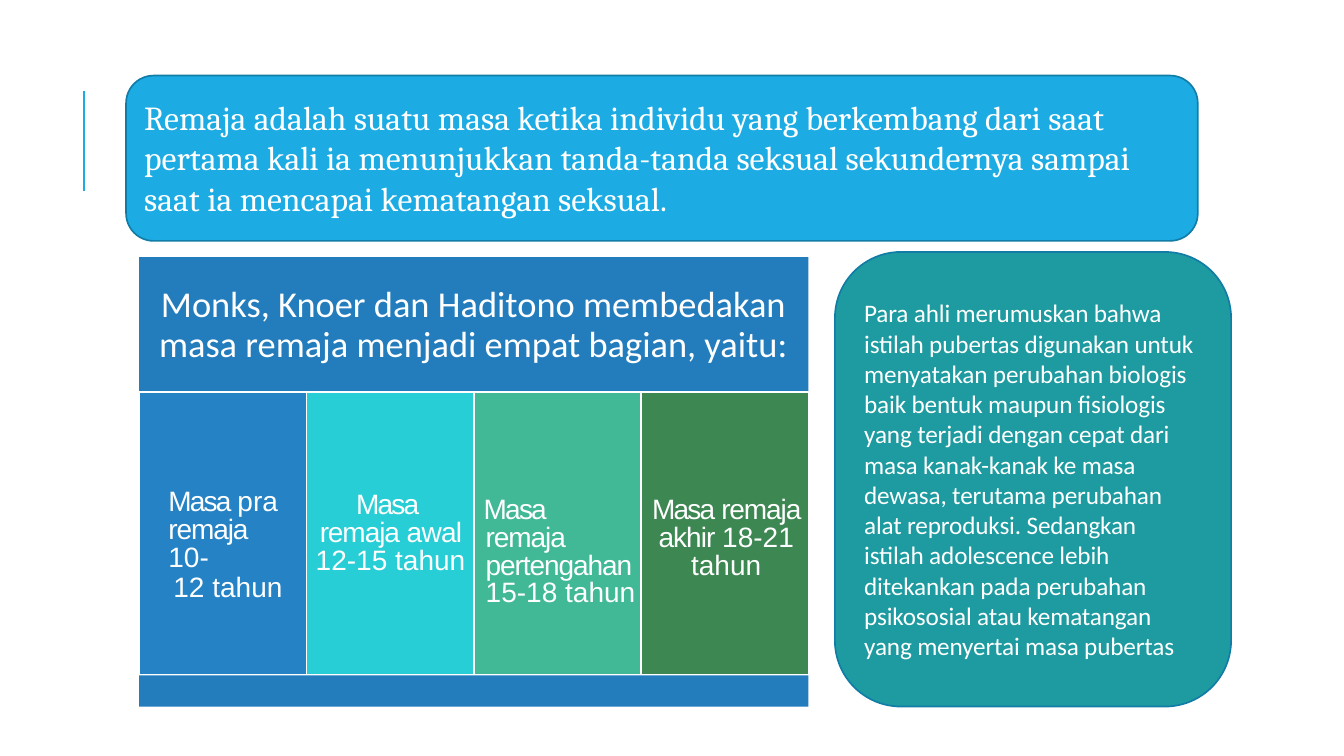
"""Build a slide that defines adolescence and its four stages."""
from dataclasses import dataclass

from lxml.etree import SubElement
from pptx import Presentation
from pptx.dml.color import RGBColor
from pptx.enum.shapes import MSO_CONNECTOR, MSO_SHAPE
from pptx.enum.text import MSO_ANCHOR, MSO_AUTO_SIZE, PP_ALIGN
from pptx.oxml.ns import qn
from pptx.util import Emu, Inches, Pt

SLIDE_WIDTH, SLIDE_HEIGHT = Inches(13.33), Inches(7.5)
BANNER = (9.38, 10, 79.74, 21.87)
TITLE = (9.08, 9.73, 77.64, 19.33)
NOTE = (62.12, 33.33, 29.48, 60.13)
PANEL_LEFT, STAGE_WIDTH = 10.35, 12.45
HEADER_TOP, STAGE_TOP, STRIP_TOP, PANEL_BOTTOM = 34, 51.87, 89.33, 93.47
RULE_X, RULE_TOP, RULE_BOTTOM = 6.23, 12, 25.33


@dataclass(frozen=True)
class Theme:
    """Colours, fonts and type sizes of the slide."""

    accent: str = "1CACE3"
    outline: str = "117DA7"
    panel: str = "237CBC"
    note: str = "1D9BA0"
    light: str = "FFFFFF"
    title_type: tuple = ("Cambria", 24)
    header_type: tuple = ("Calibri", 26)
    stage_type: tuple = ("Arial", 20)
    note_type: tuple = ("Calibri", 18)


THEME = Theme()
TRACKING = {"Masa ": -1.3, "remaja ": -0.8, "pertengahan ": -0.8,
            "awal ": -0.5, "akhir ": -0.7}
LINE_BREAK = "\v"

TITLE_TEXT = ("Remaja adalah suatu masa ketika individu yang berkembang dari saat "
              "pertama kali ia menunjukkan tanda-tanda seksual sekundernya sampai "
              "saat ia mencapai kematangan seksual.")
HEADER_TEXT = ("Monks, Knoer dan Haditono membedakan masa remaja menjadi "
               "empat bagian, yaitu:")
NOTE_TEXT = ("Para ahli merumuskan bahwa istilah pubertas digunakan untuk "
             "menyatakan perubahan biologis baik bentuk maupun fisiologis yang "
             "terjadi dengan cepat dari masa kanak-kanak ke masa dewasa, terutama "
             "perubahan alat reproduksi. Sedangkan istilah adolescence lebih "
             "ditekankan pada perubahan psikososial atau kematangan yang "
             "menyertai masa pubertas")

STAGES = [
    {"fill": "2583C5", "align": PP_ALIGN.LEFT, "insets": (0.2, 0.94, 0.19, 0),
     "paragraphs": [(("Masa ", "pra"), 0.09, 0, Pt(21.9)),
                    (("remaja ", "10-"), 0.09, 0, Pt(19.7)),
                    (("12 ", "tahun"), 0.14, 0, Pt(21.9))]},
    {"fill": "27CED6", "align": PP_ALIGN.CENTER, "insets": (0.07, 1, 0.06, 0),
     "paragraphs": [(("Masa ", LINE_BREAK, "remaja ", "awal ", "12-15 ", "tahun"),
                     0, 0, 0.82)]},
    {"fill": "42B996", "align": PP_ALIGN.LEFT, "insets": (0.1, 1.05, 0.04, 0),
     "paragraphs": [(("Masa ", LINE_BREAK, "remaja ", "pertengahan ", "15-18 ",
                      "tahun"), 0.02, -0.02, 0.82)]},
    {"fill": "3D8752", "align": PP_ALIGN.CENTER, "insets": (0.08, 1.05, 0.05, 0),
     "paragraphs": [(("Masa ", "remaja ", "akhir ", "18-21 ", "tahun"),
                     0, 0, 0.82)]},
]


def set_attributes(target, values):
    """Set every named value on the target."""
    for name, value in values.items():
        setattr(target, name, value)


def place(left, top, width, height):
    """Turn percentages of the slide into lengths."""
    return [Emu(round(share * side / 100)) for share, side in
            zip((left, top, width, height), (SLIDE_WIDTH, SLIDE_HEIGHT) * 2)]


def add_panel(slide, kind, area, fill, line=None):
    """Add a flat filled shape, outlined when a line colour is given."""
    shape = slide.shapes.add_shape(kind, *place(*area))
    shape.shadow.inherit = False
    shape.fill.solid()
    shape.fill.fore_color.rgb = RGBColor.from_string(fill)
    if line:
        shape.line.color.rgb = RGBColor.from_string(line)
        shape.line.width = Pt(1.2)
    else:
        shape.line.fill.background()
    return shape


def format_frame(shape, insets, anchor):
    """Set wrapping, insets and anchor, and return the text frame."""
    left, top, right, bottom = (Inches(inset) for inset in insets)
    set_attributes(shape.text_frame, {
        "word_wrap": True, "auto_size": MSO_AUTO_SIZE.NONE,
        "vertical_anchor": anchor, "margin_left": left, "margin_top": top,
        "margin_right": right, "margin_bottom": bottom})
    return shape.text_frame


def add_run(paragraph, text, type_style, tracking=0):
    """Add a light run with its letter spacing in points."""
    run = paragraph.add_run()
    run.text = text
    name, size = type_style
    set_attributes(run.font, {"name": name, "size": Pt(size), "bold": False})
    run.font.color.rgb = RGBColor.from_string(THEME.light)
    if tracking:
        run._r.get_or_add_rPr().set("spc", str(round(tracking * 100)))


def write_text(shape, text, type_style, align, insets, anchor, spacing=1.0, tracking=0):
    """Write one evenly styled paragraph into a shape."""
    paragraph = format_frame(shape, insets, anchor).paragraphs[0]
    set_attributes(paragraph, {"alignment": align, "line_spacing": spacing})
    add_run(paragraph, text, type_style, tracking)


def add_stage(slide, column, stage):
    """Add one stage of adolescence in its column."""
    area = (PANEL_LEFT + column * STAGE_WIDTH, STAGE_TOP,
            STAGE_WIDTH, STRIP_TOP - STAGE_TOP)
    shape = add_panel(slide, MSO_SHAPE.RECTANGLE, area, stage["fill"], THEME.light)
    frame = format_frame(shape, stage["insets"], MSO_ANCHOR.TOP)
    for index, (words, margin, indent, spacing) in enumerate(stage["paragraphs"]):
        paragraph = frame.add_paragraph() if index else frame.paragraphs[0]
        set_attributes(paragraph, {"alignment": stage["align"],
                                   "line_spacing": spacing})
        properties = paragraph._p.get_or_add_pPr()
        properties.set("marL", str(Inches(margin)))
        properties.set("indent", str(Inches(indent)))
        for word in words:
            if word == LINE_BREAK:
                paragraph.add_line_break()
            else:
                add_run(paragraph, word, THEME.stage_type, TRACKING.get(word, 0))


def add_rule(slide):
    """Add the thin vertical rule beside the title."""
    left, top, _, bottom = place(RULE_X, RULE_TOP, 0, RULE_BOTTOM)
    rule = slide.shapes.add_connector(MSO_CONNECTOR.STRAIGHT, left, bottom, left, top)
    rule.line.color.rgb = RGBColor.from_string(THEME.accent)
    rule.line.width = Pt(1.44)
    SubElement(rule._element.spPr, qn("a:effectLst"))


def add_title(slide):
    """Add the banner and lay the title placeholder over it."""
    add_panel(slide, MSO_SHAPE.ROUNDED_RECTANGLE, BANNER, THEME.accent, THEME.outline)
    title = slide.shapes.title
    slide.shapes._spTree.append(title._element)
    set_attributes(title, dict(zip(("left", "top", "width", "height"), place(*TITLE))))
    write_text(title, TITLE_TEXT, THEME.title_type, PP_ALIGN.LEFT,
               (0.22, 0.23, 0, 0), MSO_ANCHOR.TOP)


def add_stage_panel(slide):
    """Add the header, the four stages and the closing strip."""
    width = STAGE_WIDTH * len(STAGES)
    header = add_panel(slide, MSO_SHAPE.RECTANGLE,
                       (PANEL_LEFT, HEADER_TOP, width, STAGE_TOP - HEADER_TOP),
                       THEME.panel)
    write_text(header, HEADER_TEXT, THEME.header_type, PP_ALIGN.CENTER,
               (0.1, 0, 0.1, 0), MSO_ANCHOR.MIDDLE, Pt(28.6))
    for column, stage in enumerate(STAGES):
        add_stage(slide, column, stage)
    add_panel(slide, MSO_SHAPE.RECTANGLE,
              (PANEL_LEFT, STRIP_TOP, width, PANEL_BOTTOM - STRIP_TOP), THEME.panel)


def add_note(slide):
    """Add the rounded note about puberty and adolescence."""
    note = add_panel(slide, MSO_SHAPE.ROUNDED_RECTANGLE, NOTE, THEME.note, THEME.outline)
    write_text(note, NOTE_TEXT, THEME.note_type, PP_ALIGN.LEFT,
               (0.1, 0, 0.12, 0), MSO_ANCHOR.MIDDLE, tracking=-0.1)


def main():
    """Build and save the presentation."""
    presentation = Presentation()
    set_attributes(presentation, {"slide_width": SLIDE_WIDTH,
                                  "slide_height": SLIDE_HEIGHT})
    slide = presentation.slides.add_slide(presentation.slide_layouts[5])
    add_rule(slide)
    add_title(slide)
    add_stage_panel(slide)
    add_note(slide)
    presentation.save("out.pptx")


if __name__ == "__main__":
    main()
